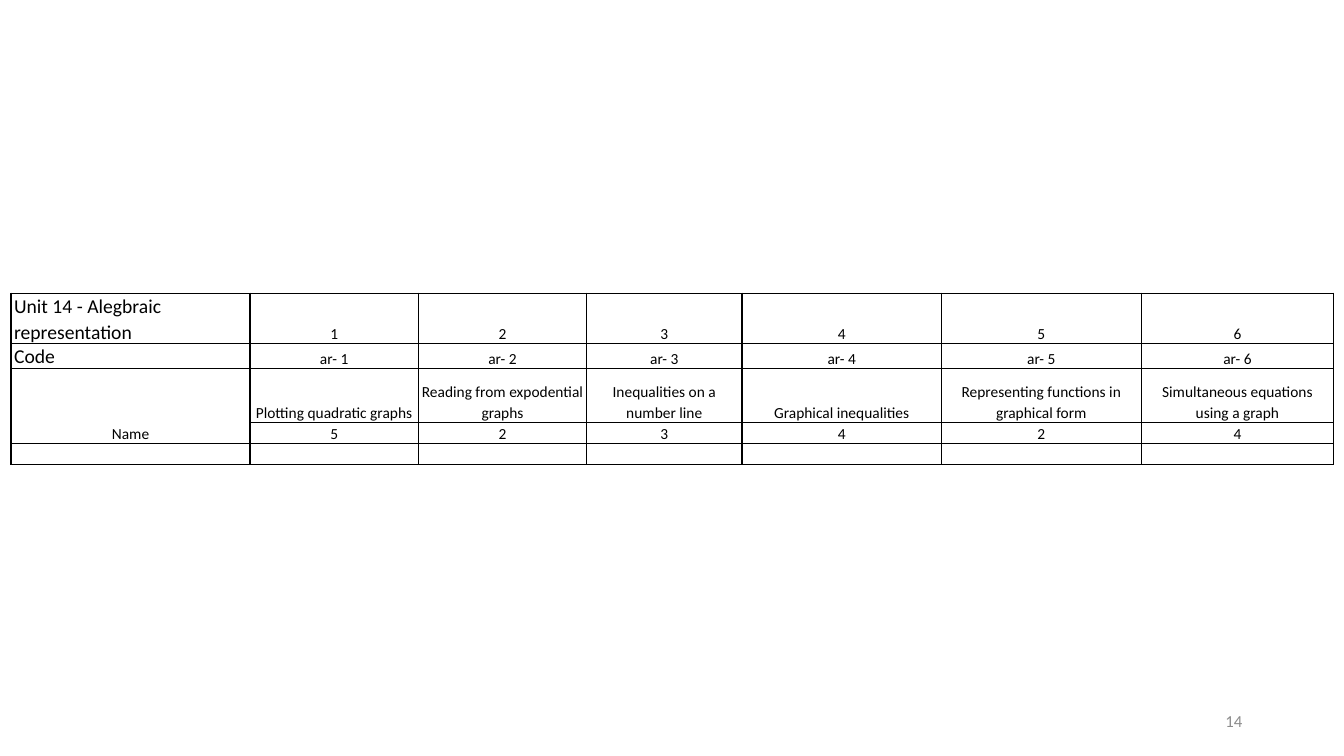
from dataclasses import dataclass

from lxml.etree import SubElement
from pptx import Presentation
from pptx.dml.color import RGBColor
from pptx.enum.text import MSO_ANCHOR, PP_ALIGN
from pptx.oxml.ns import qn
from pptx.slide import Slide
from pptx.table import Table, _Cell
from pptx.text.text import TextFrame
from pptx.util import Inches, Pt


@dataclass(frozen=True)
class Theme:
    font: str = "Calibri"
    ink: str = "000000"
    gray: str = "8C8C8C"
    head: float = 14
    body: float = 11
    foot: float = 12
    line: float = 1


@dataclass(frozen=True)
class Topic:
    name: str
    score: int
    width: float


THEME = Theme()
TOPICS = [
    Topic("Plotting quadratic graphs", 5, 1.67),
    Topic("Reading from expodential graphs", 2, 1.67),
    Topic("Inequalities on a number line", 3, 1.54),
    Topic("Graphical inequalities", 4, 1.98),
    Topic("Representing functions in graphical form", 2, 1.98),
    Topic("Simultaneous equations using a graph", 4, 1.91),
]
LABELS = ["Unit 14 - Alegbraic representation", "Code", "Name", "", ""]
HEIGHTS = [0.21, 0.21, 0.53, 0.21, 0.21]
WIDTHS = [2.37] + [topic.width for topic in TOPICS]


def write(frame: TextFrame, text: str, *, size: float = THEME.body,
          color: str = THEME.ink, align: PP_ALIGN = PP_ALIGN.CENTER,
          space: float = 1.07) -> None:
    para = frame.paragraphs[0]
    para.alignment = align
    para.line_spacing = space
    if not text:
        SubElement(para._p, qn("a:endParaRPr"), sz=str(int(size * 100)))
        return
    run = para.add_run()
    run.text = text
    run.font.size = Pt(size)
    run.font.name = THEME.font
    run.font.color.rgb = RGBColor.from_string(color)


def border(cell: _Cell) -> None:
    props = cell._tc.get_or_add_tcPr()
    for side in "LRTB":
        line = SubElement(props, qn(f"a:ln{side}"), w=str(Pt(THEME.line)))
        fill = SubElement(line, qn("a:solidFill"))
        SubElement(fill, qn("a:srgbClr"), val=THEME.ink)


def dress(cell: _Cell) -> None:
    cell.margin_left = cell.margin_right = Inches(0.03)
    cell.margin_top = cell.margin_bottom = 0
    cell.vertical_anchor = MSO_ANCHOR.BOTTOM
    border(cell)
    cell.fill.background()


def column(table: Table, col: int, texts: list[str]) -> None:
    for row, text in enumerate(texts):
        cell = table.cell(row, col)
        dress(cell)
        if col == 0 and row < 2:
            write(cell.text_frame, text, size=THEME.head, align=PP_ALIGN.LEFT)
        else:
            write(cell.text_frame, text)


def grid(slide: Slide) -> None:
    table = slide.shapes.add_table(
        len(HEIGHTS), len(WIDTHS), Inches(0.11), Inches(2.91),
        Inches(sum(WIDTHS)), Inches(sum(HEIGHTS))).table
    table.first_row = table.horz_banding = False
    for part, width in zip(table.columns, WIDTHS):
        part.width = Inches(width)
    for part, height in zip(table.rows, HEIGHTS):
        part.height = Inches(height)
    column(table, 0, LABELS)
    for num, topic in enumerate(TOPICS, 1):
        column(table, num,
               [str(num), f"ar- {num}", topic.name, str(topic.score), ""])
    table.cell(2, 0).merge(table.cell(3, 0))


def footer(slide: Slide) -> None:
    frame = slide.shapes.add_textbox(
        Inches(9.42), Inches(6.95), Inches(3), Inches(0.4)).text_frame
    frame.word_wrap = True
    frame.vertical_anchor = MSO_ANCHOR.MIDDLE
    write(frame, "14", size=THEME.foot, color=THEME.gray,
          align=PP_ALIGN.RIGHT, space=1.0)


def main() -> None:
    deck = Presentation()
    deck.slide_width, deck.slide_height = Inches(13.33), Inches(7.5)
    slide = deck.slides.add_slide(deck.slide_layouts[6])
    footer(slide)
    grid(slide)
    deck.save("out.pptx")


if __name__ == "__main__":
    main()
